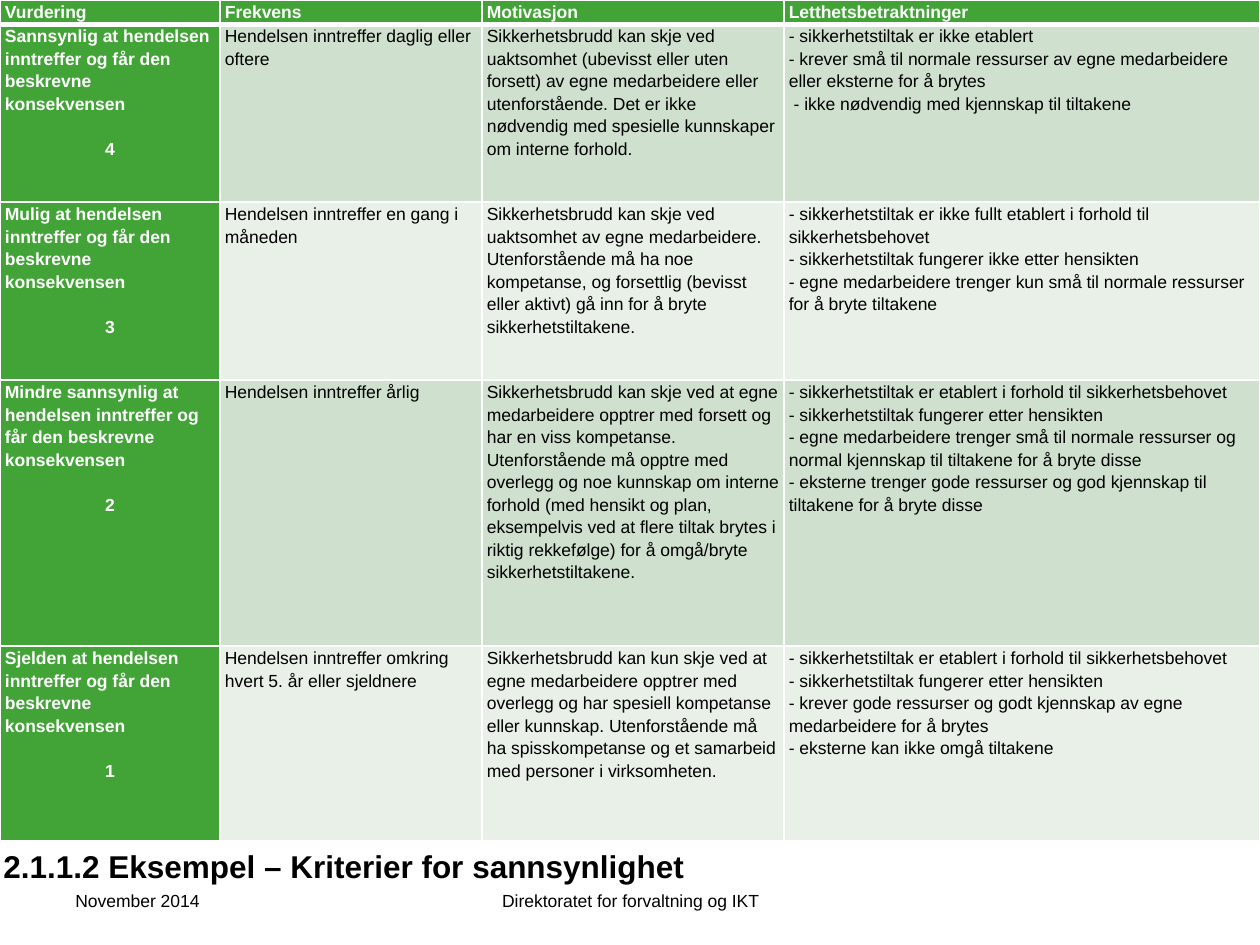
from lxml import etree
from pptx import Presentation, util as u
from pptx.dml.color import RGBColor
from pptx.enum import text
from pptx.oxml import ns

# Content
HEADERS = ["Vurdering", "Frekvens", "Motivasjon", "Letthetsbetraktninger"]
LEVELS = [
    {"rating": ["Sannsynlig at hendelsen inntreffer og får den beskrevne konsekvensen", "4"],
     "frequency": ["Hendelsen inntreffer daglig eller oftere"],
     "motivation": ["Sikkerhetsbrudd kan skje ved uaktsomhet (ubevisst eller uten forsett) av egne "
                    "medarbeidere eller utenforstående. Det er ikke nødvendig med spesielle "
                    "kunnskaper om interne forhold."],
     "ease": ["- sikkerhetstiltak er ikke etablert",
              "- krever små til normale ressurser av egne medarbeidere eller eksterne for å brytes",
              " - ikke nødvendig med kjennskap til tiltakene"]},
    {"rating": ["Mulig at hendelsen inntreffer og får den beskrevne konsekvensen", "3"],
     "frequency": ["Hendelsen inntreffer en gang i måneden"],
     "motivation": ["Sikkerhetsbrudd kan skje ved uaktsomhet av egne medarbeidere.",
                    "Utenforstående må ha noe kompetanse, og forsettlig (bevisst eller aktivt) "
                    "gå inn for å bryte sikkerhetstiltakene."],
     "ease": ["- sikkerhetstiltak er ikke fullt etablert i forhold til sikkerhetsbehovet",
              "- sikkerhetstiltak fungerer ikke etter hensikten",
              "- egne medarbeidere trenger kun små til normale ressurser for å bryte tiltakene"]},
    {"rating": ["Mindre sannsynlig at hendelsen inntreffer og får den beskrevne konsekvensen", "2"],
     "frequency": ["Hendelsen inntreffer årlig"],
     "motivation": ["Sikkerhetsbrudd kan skje ved at egne medarbeidere opptrer med forsett og har en "
                    "viss kompetanse. Utenforstående må opptre med overlegg og noe kunnskap om "
                    "interne forhold (med hensikt og plan, eksempelvis ved at flere tiltak brytes i "
                    "riktig rekkefølge) for å omgå/bryte sikkerhetstiltakene."],
     "ease": ["- sikkerhetstiltak er etablert i forhold til sikkerhetsbehovet",
              "- sikkerhetstiltak fungerer etter hensikten",
              "- egne medarbeidere trenger små til normale ressurser og normal kjennskap til "
              "tiltakene for å bryte disse",
              "- eksterne trenger gode ressurser og god kjennskap til tiltakene for å bryte disse"]},
    {"rating": ["Sjelden at hendelsen inntreffer og får den beskrevne konsekvensen", "1"],
     "frequency": ["Hendelsen inntreffer omkring hvert 5. år eller sjeldnere"],
     "motivation": ["Sikkerhetsbrudd kan kun skje ved at egne medarbeidere opptrer med overlegg og "
                    "har spesiell kompetanse eller kunnskap. Utenforstående må ha spisskompetanse "
                    "og et samarbeid med personer i virksomheten."],
     "ease": ["- sikkerhetstiltak er etablert i forhold til sikkerhetsbehovet",
              "- sikkerhetstiltak fungerer etter hensikten",
              "- krever gode ressurser og godt kjennskap av egne medarbeidere for å brytes",
              "- eksterne kan ikke omgå tiltakene"]},
]
TITLE = "2.1.1.2 Eksempel – Kriterier for sannsynlighet"
DATE = "November 2014"
OWNER = "Direktoratet for forvaltning og IKT"

# Theme and measures
THEME = {"font": "Arial", "body": 10, "title": 18, "ink": "000000", "white": "FFFFFF",
         "green": "42A437", "bands": ["CFE0CE", "E9F0E8"], "rule": 1, "header_rule": 3,
         "line": 1.15, "number_gap": 12.8}
COLUMNS = [220, 262, 302, 476]
ROWS = [18, 178, 178, 266, 195]
CELL_INSET = 5
TITLE_INDENT = 189


def px(length):
    return u.Emu(round(length * 914400 / 126))


def apply(target, values):
    for name, value in values.items():
        setattr(target, name, value)


def style(paragraph, size=THEME["body"], color=THEME["ink"], bold=False):
    apply(paragraph.font, {"name": THEME["font"], "size": u.Pt(size), "bold": bold})
    paragraph.font.color.rgb = RGBColor.from_string(color)


def add_label(slide, box, words, align, anchor, **font):
    shape = slide.shapes.add_textbox(*map(px, box))
    apply(shape.text_frame, {"word_wrap": True, "vertical_anchor": anchor, "text": words})
    paragraph = shape.text_frame.paragraphs[0]
    paragraph.alignment = align
    style(paragraph, **font)
    return paragraph


def set_borders(cell, top, bottom):
    properties = cell._tc.get_or_add_tcPr()
    widths = {"lnL": THEME["rule"], "lnR": THEME["rule"], "lnT": top, "lnB": bottom}
    for index, (tag, width) in enumerate(widths.items()):
        line = etree.Element(ns.qn("a:" + tag), w=str(u.Pt(width)))
        fill = etree.SubElement(line, ns.qn("a:solidFill"))
        etree.SubElement(fill, ns.qn("a:srgbClr"), val=THEME["white"])
        properties.insert(index, line)


def fill_cell(cell, lines, row, column):
    strong = row == 0 or column == 0
    apply(cell, {"margin_left": px(CELL_INSET), "margin_right": px(CELL_INSET),
                 "margin_top": 0, "margin_bottom": 0})
    cell.fill.solid()
    cell.fill.fore_color.rgb = RGBColor.from_string(
        THEME["green"] if strong else THEME["bands"][(row - 1) % 2])
    set_borders(cell, THEME["header_rule" if row == 1 else "rule"],
                THEME["header_rule" if row == 0 else "rule"])
    cell.text_frame.text = "\n".join(lines)
    for paragraph in cell.text_frame.paragraphs:
        paragraph.line_spacing = THEME["line"]
        style(paragraph, color=THEME["white" if strong else "ink"], bold=strong)
    if row and column == 0:
        apply(paragraph, {"alignment": text.PP_ALIGN.CENTER,
                          "space_before": u.Pt(THEME["number_gap"])})


def add_criteria(slide):
    grid = [[[header] for header in HEADERS]] + [list(level.values()) for level in LEVELS]
    table = slide.shapes.add_table(len(ROWS), len(COLUMNS), 0, 0,
                                   px(sum(COLUMNS)), px(sum(ROWS))).table
    apply(table, {"first_row": False, "horz_banding": False})
    for column, width in zip(table.columns, COLUMNS):
        column.width = px(width)
    for r, (height, cells) in enumerate(zip(ROWS, grid)):
        table.rows[r].height = px(height)
        for c, lines in enumerate(cells):
            fill_cell(table.cell(r, c), lines, r, c)


def main():
    presentation = Presentation()
    apply(presentation, {"slide_width": px(1260), "slide_height": px(945)})
    slide = presentation.slides.add_slide(presentation.slide_layouts[6])

    # Footer
    middle = text.MSO_ANCHOR.MIDDLE
    add_label(slide, (431, 876, 399, 50), OWNER, text.PP_ALIGN.CENTER, middle)
    add_label(slide, (63, 876, 294, 50), DATE, text.PP_ALIGN.LEFT, middle)

    # Criteria table
    add_criteria(slide)

    # Title
    title = add_label(slide, (-198, 841, 896, 50), TITLE, text.PP_ALIGN.LEFT,
                      text.MSO_ANCHOR.TOP, size=THEME["title"], bold=True)
    title.level = 3
    properties = title._p.get_or_add_pPr()
    properties.set("marL", str(px(TITLE_INDENT)))
    properties.set("indent", "0")

    presentation.save("out.pptx")


if __name__ == "__main__":
    main()
